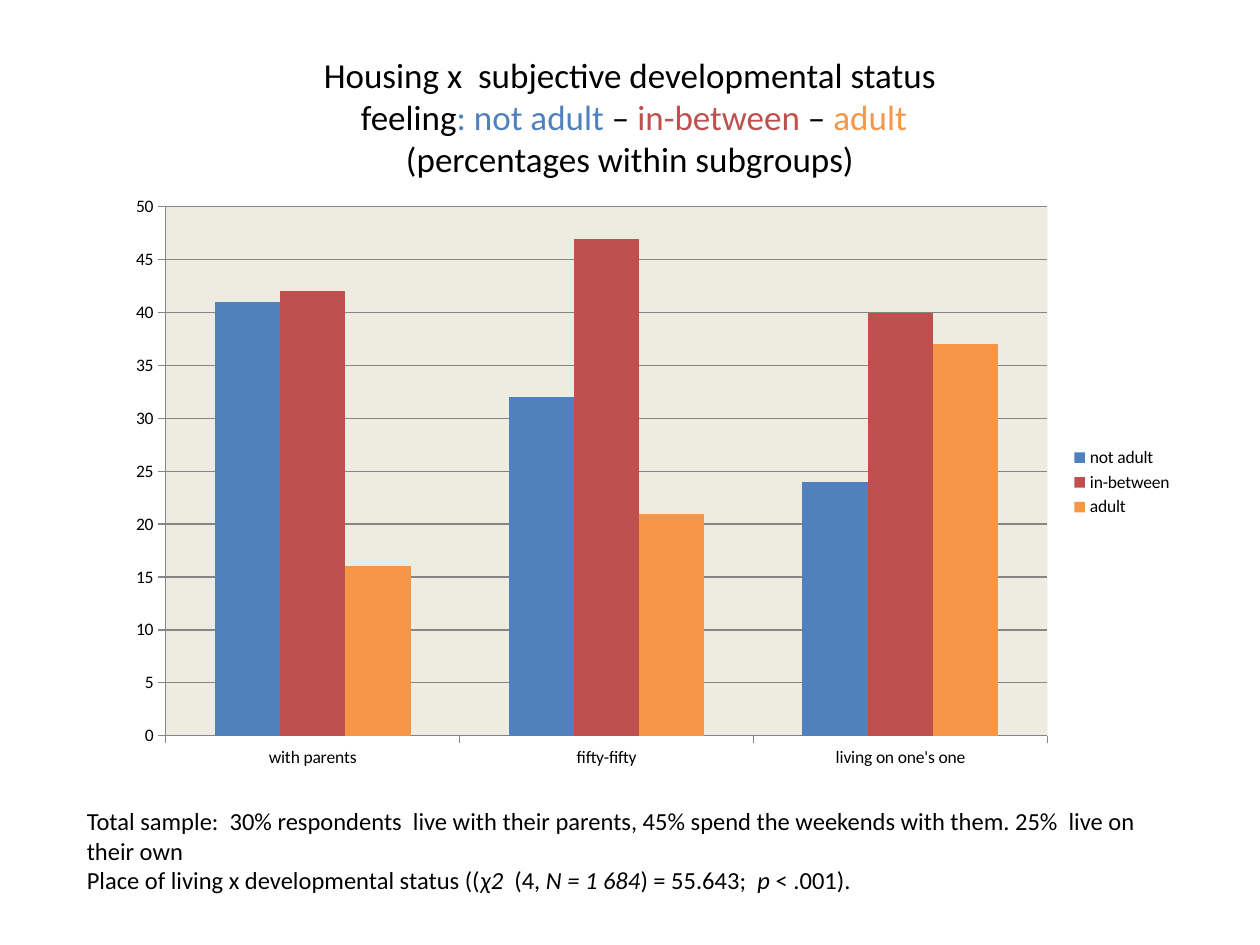
from pptx import Presentation
from pptx.chart.data import CategoryChartData
from pptx.dml.color import RGBColor
from pptx.enum.chart import XL_CHART_TYPE, XL_LEGEND_POSITION, XL_TICK_MARK
from pptx.enum.text import MSO_ANCHOR, MSO_AUTO_SIZE, PP_ALIGN
from pptx.oxml import parse_xml
from pptx.oxml.ns import nsdecls
from pptx.util import Pt

BLACK = RGBColor(0x00, 0x00, 0x00)
BLUE = RGBColor(0x4F, 0x81, 0xBD)
RED = RGBColor(0xC0, 0x50, 0x4D)
ORANGE = RGBColor(0xF7, 0x96, 0x46)
CREAM = RGBColor(0xEE, 0xEC, 0xE1)
GREY = RGBColor(0x86, 0x86, 0x86)
FACE = "Calibri"

TITLE = [
    [("Housing x  subjective developmental status", BLACK)],
    [(" feeling", BLACK), (": not adult ", BLUE), ("– ", BLACK),
     ("in-between", RED), (" – ", BLACK), ("adult", ORANGE)],
    [(" (percentages within subgroups) ", BLACK)],
]
NOTES = [
    [("Total sample:  30% respondents  live with their parents, "
      "45% spend the weekends with them. 25%  live on their own", False)],
    [("Place of living x developmental status ((", False), ("χ2  ", True),
     ("(4, ", False), ("N = 1 684", True), (") = 55.643;  ", False),
     ("p", True), (" < .001).", False)],
]
GROUPS = ["with parents", "fifty-fifty", "living on one's one"]
SERIES = [
    ("not adult", (41, 32, 24), BLUE),
    ("in-between", (42, 47, 40), RED),
    ("adult", (16, 21, 37), ORANGE),
]


def apply(item, form):
    for name, value in form.items():
        setattr(item, name, value)


def place(shape, left, top, width, height):
    apply(shape, {"left": Pt(left), "top": Pt(top),
                  "width": Pt(width), "height": Pt(height)})


def style(font, size, color=BLACK, italic=False):
    apply(font, {"name": FACE, "size": Pt(size), "bold": False,
                 "italic": italic})
    font.color.rgb = color


def add_run(para, text, size, **form):
    run = para.add_run()
    run.text = text
    style(run.font, size, **form)


def add_title(slide):
    title = slide.shapes.title
    place(title, 36, 21.6, 648, 90)
    frame = title.text_frame
    apply(frame, {"word_wrap": True, "vertical_anchor": MSO_ANCHOR.MIDDLE})
    para = frame.paragraphs[0]
    para.alignment = PP_ALIGN.CENTER
    for index, line in enumerate(TITLE):
        if index:
            para.add_line_break()
        for text, color in line:
            add_run(para, text, 20, color=color)


def add_notes(slide):
    box = slide.shapes.add_textbox(Pt(42.5), Pt(457.2), Pt(641), Pt(58.3))
    frame = box.text_frame
    apply(frame, {"word_wrap": True,
                  "auto_size": MSO_AUTO_SIZE.SHAPE_TO_FIT_TEXT})
    for index, line in enumerate(NOTES):
        para = frame.add_paragraph() if index else frame.paragraphs[0]
        for text, italic in line:
            add_run(para, text, 14, italic=italic)


def fill_plot(chart):
    area = chart.plots[0]._element.getparent()
    area.append(parse_xml(
        f'<c:spPr {nsdecls("c", "a")}><a:solidFill>'
        f'<a:srgbClr val="{CREAM}"/></a:solidFill></c:spPr>'))


def add_bars(slide):
    data = CategoryChartData(number_format="General")
    data.categories = GROUPS
    for name, values, _ in SERIES:
        data.add_series(name, values)
    chart = slide.shapes.add_chart(
        XL_CHART_TYPE.COLUMN_CLUSTERED,
        Pt(65.5), Pt(105.8), Pt(612), Pt(339.8), data).chart
    apply(chart, {"has_title": False, "has_legend": True})
    style(chart.font, 10)
    apply(chart.legend, {"position": XL_LEGEND_POSITION.RIGHT,
                         "include_in_layout": False})
    plot = chart.plots[0]
    apply(plot, {"gap_width": 150, "overlap": 0, "vary_by_categories": False})
    for bar, (_, _, color) in zip(plot.series, SERIES):
        bar.invert_if_negative = False
        bar.format.fill.solid()
        bar.format.fill.fore_color.rgb = color
    scale = chart.value_axis
    apply(scale, {"minimum_scale": 0, "maximum_scale": 50, "major_unit": 5,
                  "has_major_gridlines": True})
    for axis in (chart.category_axis, scale):
        apply(axis, {"major_tick_mark": XL_TICK_MARK.OUTSIDE,
                     "minor_tick_mark": XL_TICK_MARK.NONE})
    for part in (chart.category_axis, scale, scale.major_gridlines):
        part.format.line.color.rgb = GREY
        part.format.line.width = Pt(0.75)
    fill_plot(chart)


def main():
    deck = Presentation()
    apply(deck, {"slide_width": Pt(720), "slide_height": Pt(540)})
    slide = deck.slides.add_slide(deck.slide_layouts[5])
    add_title(slide)
    add_notes(slide)
    add_bars(slide)
    deck.save("out.pptx")


if __name__ == "__main__":
    main()
